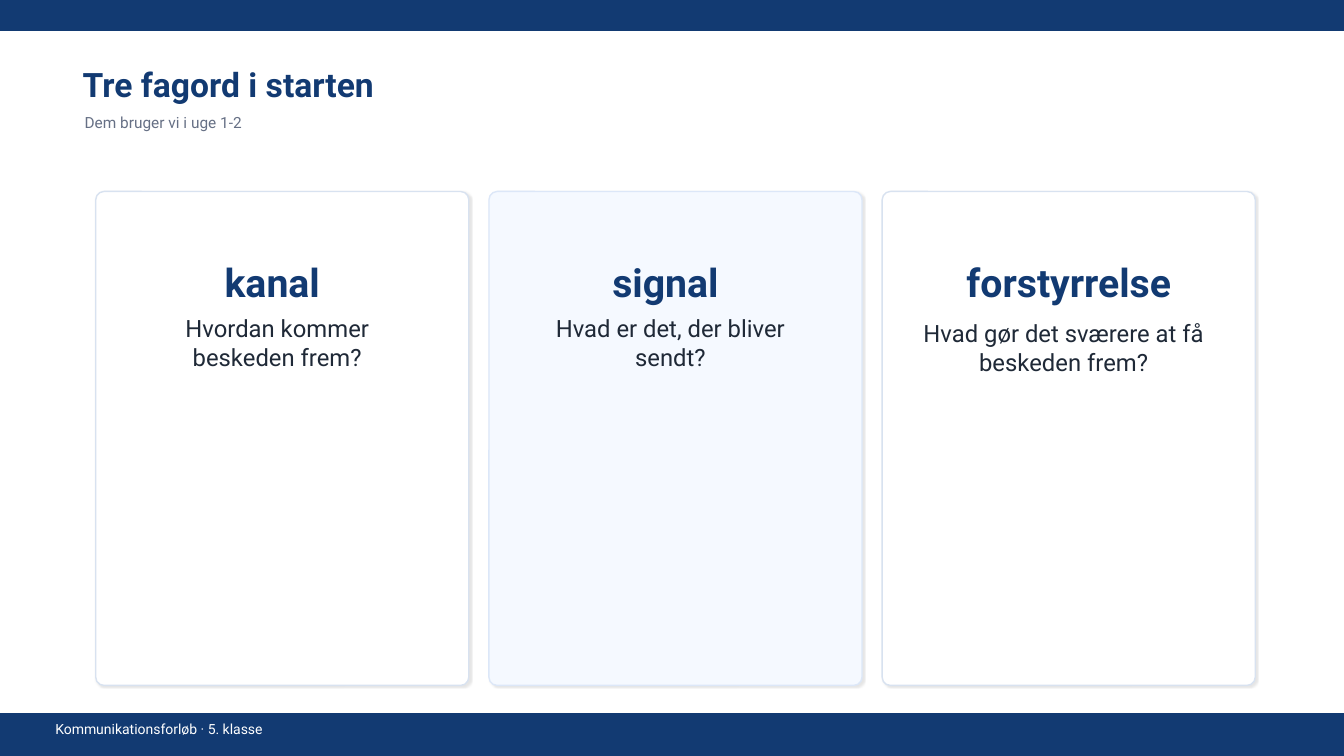
"""Builds a slide with three key terms, each on its own card."""
from lxml.etree import SubElement
from pptx import Presentation
from pptx.dml.color import RGBColor
from pptx.enum.shapes import MSO_SHAPE as Preset
from pptx.enum.text import MSO_ANCHOR as Anchor, MSO_AUTO_SIZE as AutoSize, PP_ALIGN as Align
from pptx.oxml.ns import qn
from pptx.util import Inches, Pt

TITLE = "Tre fagord i starten"
SUBTITLE = "Dem bruger vi i uge 1-2"
FOOTER = "Kommunikationsforløb · 5. klasse"
CARDS = [
    {"term": "kanal", "question": "Hvordan kommer beskeden frem?",
     "fill": "white", "line": "border",
     "term_box": (0.35, 0.7, 2.8, 0.4), "question_box": (0.3, 1.2, 3, 0.6)},
    {"term": "signal", "question": "Hvad er det, der bliver sendt?",
     "fill": "tint", "line": "tint_border",
     "term_box": (0.35, 0.7, 2.8, 0.4), "question_box": (0.3, 1.2, 3, 0.6)},
    {"term": "forstyrrelse", "question": "Hvad gør det sværere at få beskeden frem?",
     "fill": "white", "line": "border",
     "term_box": (0.3, 0.7, 3.1, 0.4), "question_box": (0.25, 1.15, 3.1, 0.8)},
]
COLORS = {
    "navy": "123A72", "white": "FFFFFF", "grey": "667085", "ink": "1F2937",
    "border": "D8E2F0", "tint": "F5F9FF", "tint_border": "DCE7F8", "shadow": "000000",
}
FONT = "Roboto"
WIDTH, HEIGHT = 13.33, 7.5
TOP_BAR, BOTTOM_BAR = 0.3, 0.42
CARD_LEFT, CARD_TOP, CARD_WIDTH, CARD_HEIGHT, CARD_GAP = 0.95, 1.9, 3.7, 4.9, 0.2


def color(name):
    return RGBColor.from_string(COLORS[name])


def add_panel(slide, preset, box, fill, line):
    shape = slide.shapes.add_shape(preset, *map(Inches, box))
    shape.fill.solid()
    shape.fill.fore_color.rgb = color(fill)
    shape.line.color.rgb = color(line)
    shape.line.width = Pt(1)
    shape.shadow.inherit = False
    return shape


def add_soft_shadow(shape):
    effects = shape.element.spPr.find(qn("a:effectLst"))
    shadow = SubElement(effects, qn("a:outerShdw"), blurRad=str(Pt(1)), dist=str(Pt(1.2)),
                        dir=str(45 * 60000), algn="ctr", rotWithShape="0")
    tone = SubElement(shadow, qn("a:srgbClr"), val=COLORS["shadow"])
    SubElement(tone, qn("a:alpha"), val="10000")


def write(shape, text, size, tone, bold=False, align=Align.LEFT):
    frame = shape.text_frame
    frame.word_wrap = True
    frame.auto_size = AutoSize.NONE
    frame.vertical_anchor = Anchor.MIDDLE
    paragraph = frame.paragraphs[0]
    paragraph.alignment = align
    run = paragraph.add_run()
    run.text = text
    run.font.name = FONT
    run.font.size = Pt(size)
    run.font.bold = bold
    run.font.color.rgb = color(tone)


def add_text(slide, box, *args, **options):
    write(slide.shapes.add_textbox(*map(Inches, box)), *args, **options)


def add_card(slide, column, card):
    left = CARD_LEFT + column * (CARD_WIDTH + CARD_GAP)
    panel = add_panel(slide, Preset.ROUNDED_RECTANGLE,
                      (left, CARD_TOP, CARD_WIDTH, CARD_HEIGHT), card["fill"], card["line"])
    panel.adjustments[0] = 0.022
    add_soft_shadow(panel)
    for part, size, tone, bold in (("term", 28, "navy", True), ("question", 17, "ink", False)):
        x, y, width, height = card[part + "_box"]
        add_text(slide, (left + x, CARD_TOP + y, width, height), card[part],
                 size, tone, bold=bold, align=Align.CENTER)


def main():
    presentation = Presentation()
    presentation.slide_width, presentation.slide_height = Inches(WIDTH), Inches(HEIGHT)
    slide = presentation.slides.add_slide(presentation.slide_layouts[5])

    for top, height in ((0, TOP_BAR), (HEIGHT - BOTTOM_BAR, BOTTOM_BAR)):
        add_panel(slide, Preset.RECTANGLE, (0, top, WIDTH, height), "navy", "navy")
    add_text(slide, (0.45, 7.16, 8, 0.15), FOOTER, 10, "white")

    title = slide.shapes.title
    title.left, title.top, title.width, title.height = map(Inches, (0.72, 0.62, 11.1, 0.42))
    write(title, TITLE, 24, "navy", bold=True)
    add_text(slide, (0.74, 1.1, 10.8, 0.22), SUBTITLE, 11, "grey")

    for column, card in enumerate(CARDS):
        add_card(slide, column, card)
    presentation.save("out.pptx")


if __name__ == "__main__":
    main()
